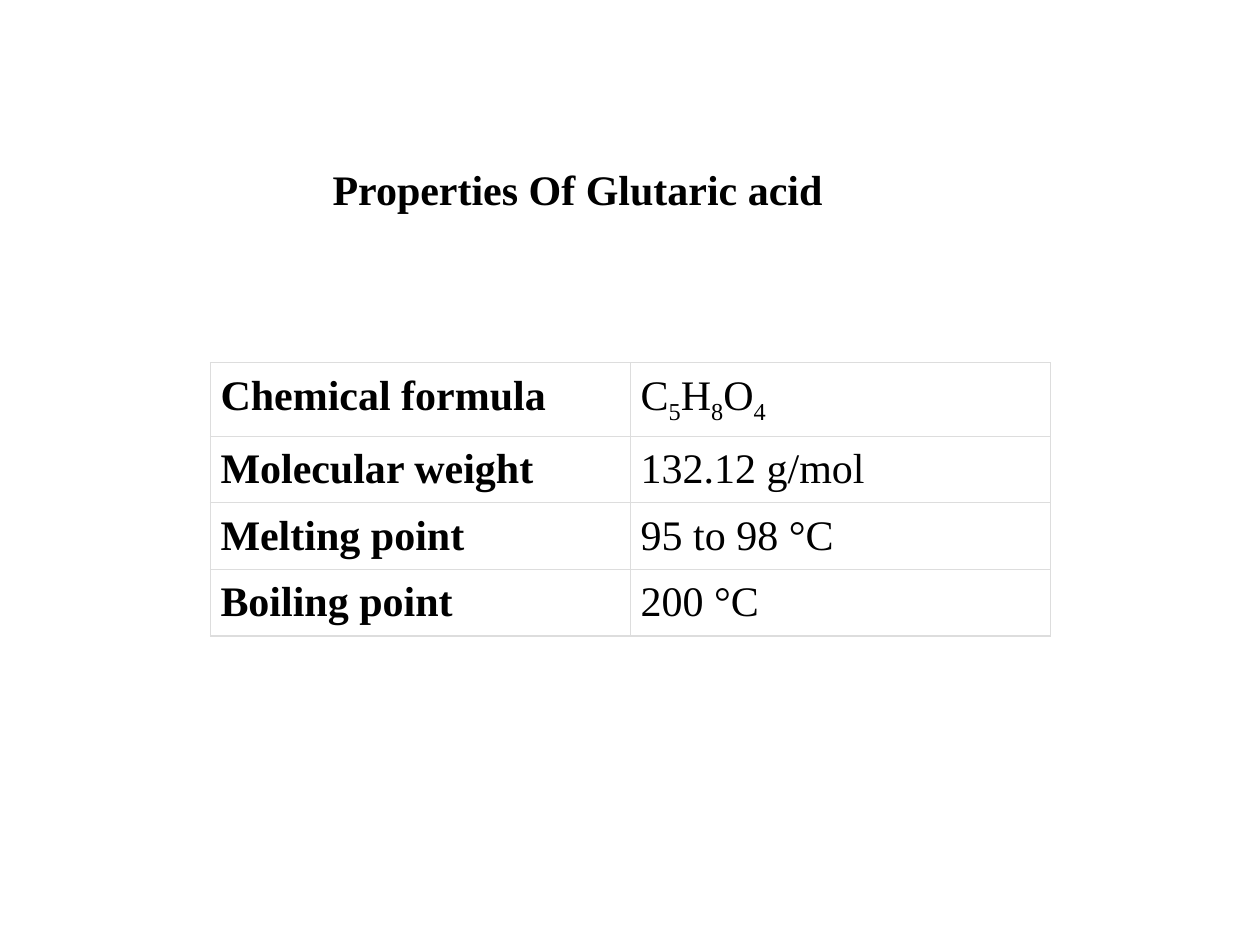
import pptx
import pptx.dml.color
import pptx.enum.text
import pptx.oxml
import pptx.oxml.ns
import pptx.util
from pptx.util import Inches

BLACK = pptx.dml.color.RGBColor(0x00, 0x00, 0x00)
WHITE = pptx.dml.color.RGBColor(0xFF, 0xFF, 0xFF)
BORDER = pptx.dml.color.RGBColor(0xDD, 0xDD, 0xDD)
FONT = {"name": "Times New Roman", "size": pptx.util.Pt(24)}
MARGINS = {
    f"margin_{side}": Inches(0.08) for side in ("left", "right", "top", "bottom")
}
PROPERTIES = [
    ("Chemical formula", "C5H8O4"),
    ("Molecular weight", "132.12 g/mol"),
    ("Melting point", "95 to 98 °C"),
    ("Boiling point", "200 °C"),
]
FORMULA_ROW = 0


def add_span(para, text, bold=False, subscript=False):
    span = para.add_run()
    span.text = text
    for name, value in {**FONT, "bold": bold}.items():
        setattr(span.font, name, value)
    span.font.color.rgb = BLACK
    if subscript:
        span.font._element.set("baseline", "-25000")


def add_formula(para, formula):
    """Write a chemical formula with its digits as subscripts."""
    for symbol in formula:
        add_span(para, symbol, subscript=symbol.isdigit())


def add_borders(cell):
    properties = cell._tc.get_or_add_tcPr()
    for position, side in enumerate(("lnL", "lnR", "lnT", "lnB")):
        line = pptx.oxml.parse_xml(
            f'<a:{side} {pptx.oxml.ns.nsdecls("a")} w="{pptx.util.Pt(0.75)}">'
            f'<a:solidFill><a:srgbClr val="{BORDER}"/></a:solidFill></a:{side}>'
        )
        properties.insert(position, line)


def add_title(page, left, top, width, height):
    box = page.shapes.add_textbox(left, top, width, height)
    box.text_frame.word_wrap = True
    para = box.text_frame.paragraphs[0]
    para.alignment = pptx.enum.text.PP_ALIGN.CENTER
    add_span(para, "Properties Of Glutaric acid", bold=True)


def add_property_table(page, left, top, width, height):
    table = page.shapes.add_table(
        len(PROPERTIES), 2, left, top, width, height
    ).table
    table.first_row = table.horz_banding = False
    for row in table.rows:
        row.height = Inches(0.43)
    for row, texts in enumerate(PROPERTIES):
        for column, text in enumerate(texts):
            cell = table.cell(row, column)
            for name, value in MARGINS.items():
                setattr(cell, name, value)
            cell.fill.solid()
            cell.fill.fore_color.rgb = WHITE
            add_borders(cell)
            para = cell.text_frame.paragraphs[0]
            if row == FORMULA_ROW and column == 1:
                add_formula(para, text)
            else:
                add_span(para, text, bold=column == 0)


def main():
    deck = pptx.Presentation()
    deck.slide_width, deck.slide_height = Inches(10), Inches(7.5)
    page = deck.slides.add_slide(deck.slide_layouts[6])
    add_property_table(page, Inches(1.67), Inches(2.88), Inches(6.67), Inches(2.21))
    add_title(page, Inches(1.67), Inches(1.25), Inches(5.83), Inches(1.11))
    deck.save("out.pptx")


if __name__ == "__main__":
    main()
